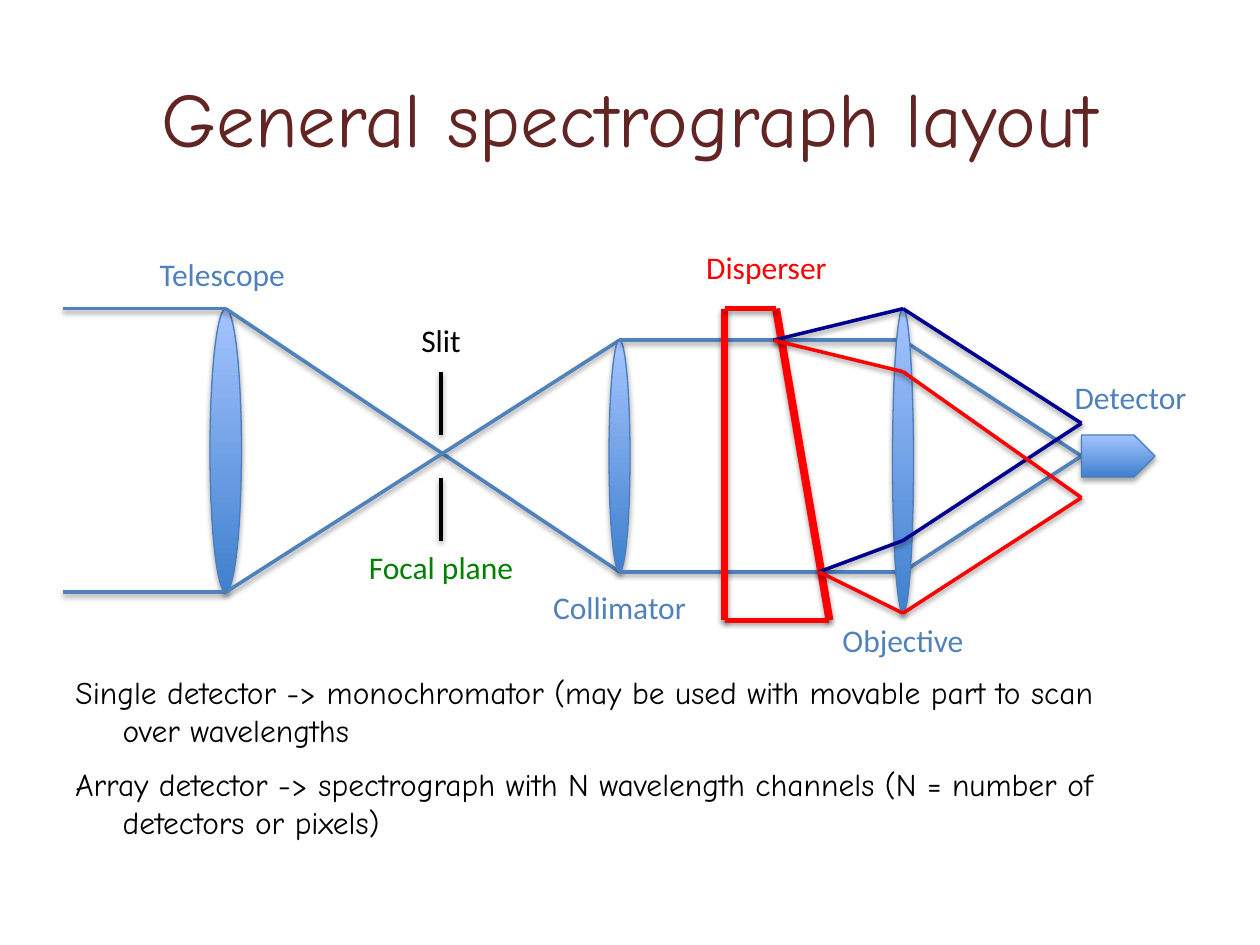
import itertools
import pptx
import pptx.util
import pptx.dml.color
import pptx.enum.shapes
import pptx.enum.text
import pptx.oxml.ns
from lxml import etree

Pt = pptx.util.Pt
Shape = pptx.enum.shapes.MSO_SHAPE
Align = pptx.enum.text.PP_ALIGN
Anchor = pptx.enum.text.MSO_ANCHOR
qn = pptx.oxml.ns.qn

BLUE, RED, NAVY, BLACK, GREEN = "4F81BD", "FF0000", "000090", "000000", "008000"
BROWN, EDGE, DARK, LIGHT = "632523", "4B7EBC", "3F80CE", "A4C4FF"


def color(code):
    return pptx.dml.color.RGBColor.from_string(code)


def shade(props, dist, alpha):
    """Put a soft shadow straight below a shape or line."""
    effects = props.find(qn("a:effectLst"))
    if effects is None:
        effects = etree.SubElement(props, qn("a:effectLst"))
    outer = etree.SubElement(
        effects, qn("a:outerShdw"), blurRad=str(Pt(3.1)),
        dist=str(Pt(dist)), dir="5400000", rotWithShape="0")
    tint = etree.SubElement(outer, qn("a:srgbClr"), val=BLACK)
    etree.SubElement(tint, qn("a:alpha"), val=str(alpha * 1000))


def trace(slide, box, points, code, width=2):
    """Join points, given relative to the box, with straight lines."""
    left, top = box[:2]
    for (x1, y1), (x2, y2) in itertools.pairwise(points):
        line = slide.shapes.add_connector(
            pptx.enum.shapes.MSO_CONNECTOR.STRAIGHT,
            Pt(left + x1), Pt(top + y1), Pt(left + x2), Pt(top + y2))
        line.line.color.rgb = color(code)
        line.line.width = Pt(width)
        shade(line._element.spPr, 1.6, 38)


def solid(slide, box, kind, x, y, w, h):
    """Add a shaded blue part at a place relative to the box."""
    part = slide.shapes.add_shape(
        kind, Pt(box[0] + x), Pt(box[1] + y), Pt(w), Pt(h))
    part.fill.gradient()
    part.fill.gradient_angle = 90
    for stop, code in zip(part.fill.gradient_stops, (DARK, LIGHT)):
        stop.color.rgb = color(code)
    part.line.color.rgb = color(EDGE)
    part.line.width = Pt(0.75)
    part.shadow.inherit = False
    shade(part._element.spPr, 1.8, 35)


def lens(slide, box, x, top, base, w):
    solid(slide, box, Shape.OVAL, x - w / 2, top, w, base - top)


def write(slide, box, lines, size, font, code, align=Align.LEFT,
          anchor=Anchor.TOP, hang=0, gap=0):
    """Fill a text box, one paragraph for each line."""
    frame = slide.shapes.add_textbox(*map(Pt, box)).text_frame
    frame.word_wrap = True
    frame.vertical_anchor = anchor
    for index, text in enumerate(lines):
        para = frame.paragraphs[0] if index == 0 else frame.add_paragraph()
        para.alignment = align
        if hang:
            props = para._p.get_or_add_pPr()
            props.set("marL", str(Pt(hang)))
            props.set("indent", str(Pt(-hang)))
        if index:
            para.space_before = Pt(gap)
        run = para.add_run()
        run.text = text
        run.font.size = Pt(size)
        run.font.name = font
        run.font.color.rgb = color(code)


def title(slide, box):
    write(slide, box, ["General spectrograph layout"], 44, "Comic Neue",
          BROWN, Align.CENTER, Anchor.MIDDLE)


def optics(slide, box):
    # Key places on the light path
    tele, coll, obj, plane = 93, 318, 480, 582
    low, upper, lower, focus = 162, 18, 150.4, 84.2
    front, back = (406, upper), (432, lower)

    # Telescope and incoming light, crossing at the slit
    lens(slide, box, tele, 0, low, 18)
    trace(slide, box, [(0, 0), (tele, 0), (coll, lower)], BLUE)
    trace(slide, box, [(0, low), (tele, low), (coll, upper)], BLUE)

    # Collimator, straight beam and detector
    lens(slide, box, coll, upper, lower, 12)
    for y in (upper, lower):
        trace(slide, box, [(coll, y), (obj, y), (plane, focus)], BLUE)
    solid(slide, box, Shape.PENTAGON, plane, focus - 12, 42, 24)

    # Slit jaws
    for y in (36, 96.5):
        trace(slide, box, [(216, y), (216, y + 36)], BLACK)

    # Disperser prism
    left, base = 378, 178
    trace(slide, box, [(left, 0), (left, base)], RED, 4.5)
    trace(slide, box, [(407.5, 0), (438, base)], RED, 4.5)
    trace(slide, box, [(left, 0), (407.5, 0)], RED, 3)
    trace(slide, box, [(left, base), (438, base)], RED, 3)

    # Objective and dispersed rays
    lens(slide, box, obj, 0, 174, 12)
    for code, top, spot, bottom in ((NAVY, 0, 65.5, 132.5),
                                    (RED, 36, 108, 174)):
        trace(slide, box, [front, (obj, top), (plane, spot),
                           (obj, bottom), back], code)


def labels(slide, box):
    for text, x, y, w, code in (
            ("Telescope", 36, -34, 110, BLUE),
            ("Focal plane", 156, 133.2, 120, GREEN),
            ("Objective", 432, 175, 96, BLUE),
            ("Detector", 540, 36, 140, BLUE),
            ("Collimator", 270, 156.2, 96, BLUE),
            ("Disperser", 312, -38, 180, RED),
            ("Slit", 192, 3.6, 48, BLACK)):
        write(slide, (box[0] + x, box[1] + y, w, 29), [text], 18,
              "Calibri", code, Align.CENTER)


def notes(slide, box):
    write(slide, box, [
        "Single detector -> monochromator (may be used with movable part"
        " to scan over wavelengths",
        "Array detector -> spectrograph with N wavelength channels"
        " (N = number of detectors or pixels)",
    ], 18, "Comic Neue", BLACK, hang=27, gap=9.6)


def main():
    deck = pptx.Presentation()
    deck.slide_width, deck.slide_height = Pt(720), Pt(540)
    slide = deck.slides.add_slide(deck.slide_layouts[6])
    title(slide, (36, 21.6, 648, 90))
    bench = (36, 176.4, 648, 178)
    optics(slide, bench)
    labels(slide, bench)
    notes(slide, (36, 381, 624, 105))
    deck.save("out.pptx")


if __name__ == "__main__":
    main()
